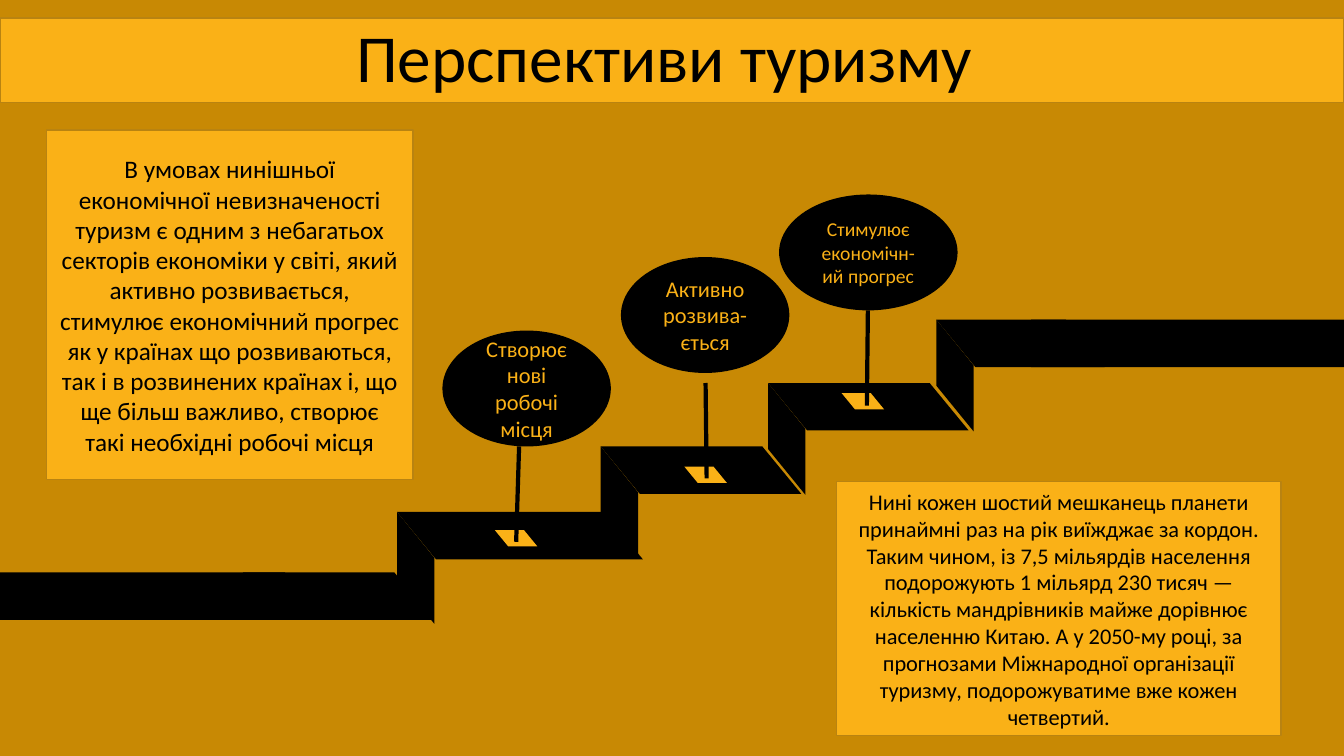
"""Builds the slide about the prospects of tourism: a rising road with three milestones."""
from lxml import etree
from pptx import Presentation
from pptx.dml.color import RGBColor
from pptx.enum.shapes import MSO_CONNECTOR, MSO_SHAPE
from pptx.enum.text import MSO_ANCHOR, PP_ALIGN
from pptx.oxml.ns import qn
from pptx.util import Inches, Pt

RECTANGLE, OVAL = MSO_SHAPE.RECTANGLE, MSO_SHAPE.OVAL
PARALLELOGRAM = MSO_SHAPE.PARALLELOGRAM
STRAIGHT = MSO_CONNECTOR.STRAIGHT
MIDDLE, CENTER = MSO_ANCHOR.MIDDLE, PP_ALIGN.CENTER
OCHRE = RGBColor(0xC8, 0x89, 0x04)
AMBER = RGBColor(0xFA, 0xB1, 0x17)
BRONZE = RGBColor(0xB9, 0x83, 0x11)
BLACK = RGBColor(0, 0, 0)

deck = Presentation()
deck.slide_width, deck.slide_height = Inches(13.333), Inches(7.5)
page = deck.slides.add_slide(deck.slide_layouts[6])
page.background.fill.solid()
page.background.fill.fore_color.rgb = OCHRE
COLUMN, ROW = deck.slide_width / 64, deck.slide_height / 36


def add_block(kind, column, row, columns, rows, fill):
    """Place a flat shape on the 64 by 36 grid."""
    block = page.shapes.add_shape(kind, int(column * COLUMN), int(row * ROW),
                                  int(columns * COLUMN), int(rows * ROW))
    block.shadow.inherit = False
    block.fill.solid()
    block.fill.fore_color.rgb = fill
    block.line.fill.background()
    if kind == PARALLELOGRAM:
        block.adjustments[0] = 0.822
        block.element.spPr.find(qn("a:xfrm")).set("flipH", "1")
    return block


def write(block, text, size, color):
    """Fill a shape with one centred paragraph."""
    frame = block.text_frame
    frame.word_wrap = True
    frame.vertical_anchor = MIDDLE
    frame.margin_left = frame.margin_right = Inches(0.13)
    frame.margin_top = frame.margin_bottom = Inches(0.07)
    para = frame.paragraphs[0]
    para.text = text
    para.alignment = CENTER
    para.font.name, para.font.size = "Calibri", Pt(size)
    para.font.color.rgb = color
    return para


panels = [
    (0, 0.86, 64, 4.03, 48, "Перспективи туризму "),
    (2.21, 6.19, 17.47, 16.66, 18,
     "В умовах нинішньої економічної невизначеності туризм є одним з небагатьох "
     "секторів економіки у світі, який активно розвивається, стимулює економічний "
     "прогрес як у країнах що розвиваються, так і в розвинених країнах і, що ще "
     "більш важливо, створює такі необхідні робочі місця"),
    (39.84, 22.94, 21.17, 12.1, 16,
     "Нині кожен шостий мешканець планети принаймні раз на рік виїжджає за кордон. "
     "Таким чином, із 7,5 мільярдів населення подорожують 1 мільярд 230 тисяч — "
     "кількість мандрівників майже дорівнює населенню Китаю. А у 2050-му році, за "
     "прогнозами Міжнародної організації туризму, подорожуватиме вже кожен четвертий."),
]
panel_paras = []
for column, row, columns, rows, size, text in panels:
    panel = add_block(RECTANGLE, column, row, columns, rows, AMBER)
    panel.line.color.rgb = BRONZE
    panel.line.width = Pt(1)
    panel_paras.append(write(panel, text, size, BLACK))
title = panel_paras[0]
title.line_spacing = 0.9
title.space_before = Pt(10)

TREAD_ROWS = 2.26
RISER_LENGTH, RISER_DEPTH = 5.33, 1.78
road_start, road_end = 27.26, 15.22
add_block(PARALLELOGRAM, 11.57, road_start, 9.07, TREAD_ROWS, BLACK)
add_block(RECTANGLE, 0, road_start, 13.58, TREAD_ROWS, BLACK)
steps = [(18.91, 24.38, 11.71), (28.61, 21.26, 9.55),
         (36.58, 18.24, 9.55), (44.59, road_end, 8.02)]
turn_shift = (RISER_LENGTH - RISER_DEPTH) / 2
for column, row, columns in steps:
    add_block(PARALLELOGRAM, column, row, columns, TREAD_ROWS, BLACK)
    riser = add_block(PARALLELOGRAM, column - turn_shift, row + turn_shift,
                      RISER_LENGTH, RISER_DEPTH, BLACK)
    riser.adjustments[0] = 1.227
    riser.rotation = 270
    riser.element.spPr.find(qn("a:xfrm")).set("flipV", "1")
add_block(RECTANGLE, 49.1, road_end, 14.9, TREAD_ROWS, BLACK)

milestones = [
    ("Створює нові робочі місця", 16, (21.07, 15.74, 8.02),
     (23.57, 25.25), (24.72, 21.26, 24.58)),
    ("Активно розвива-ється", 16, (29.57, 12.24, 8.02),
     (32.59, 22.22), (33.6, 18.24, 33.65)),
    ("Стимулює економічн-ий прогрес", 14, (37.1, 9.26, 8.5),
     (40.08, 18.72), (41.33, 14.78, 41.28)),
]
POLE_ROWS = 4.54
for text, size, (column, row, columns), spot, (top_column, top_row, foot_column) in milestones:
    add_block(PARALLELOGRAM, *spot, 2.02, 0.77, AMBER)
    write(add_block(OVAL, column, row, columns, 5.52, BLACK), text, size, AMBER)
    pole = page.shapes.add_connector(
        STRAIGHT, int(top_column * COLUMN), int(top_row * ROW),
        int(foot_column * COLUMN), int((top_row + POLE_ROWS) * ROW))
    pole.line.color.rgb = BLACK
    pole.line.width = Pt(3)
    etree.SubElement(pole.element.spPr, qn("a:effectLst"))

deck.save("out.pptx")
